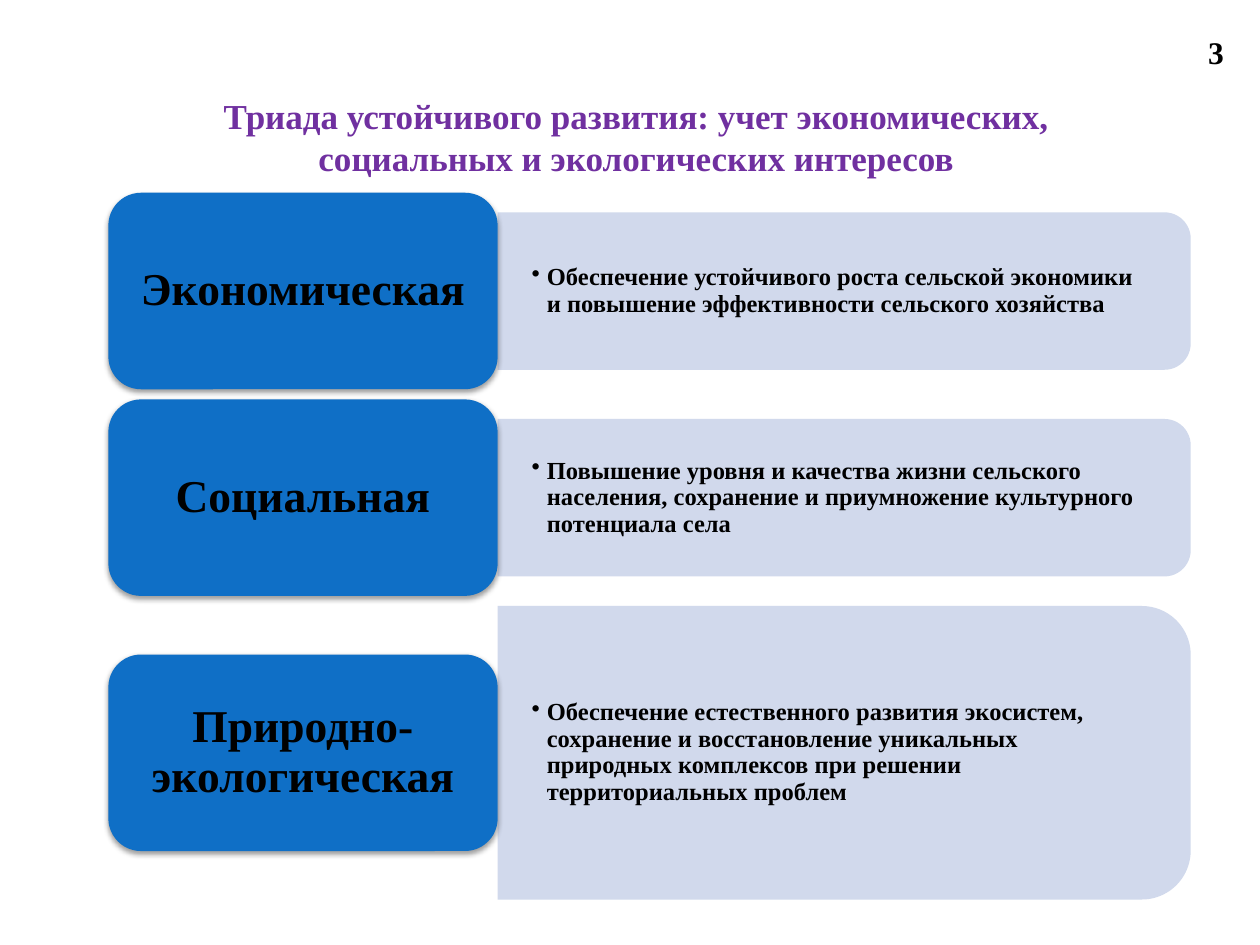
from lxml.etree import SubElement
from pptx import Presentation
from pptx.dml.color import RGBColor
from pptx.enum.shapes import MSO_SHAPE as Shape
from pptx.enum.text import MSO_ANCHOR as Anchor, MSO_AUTO_SIZE as AutoSize, PP_ALIGN as Align
from pptx.oxml.ns import qn
from pptx.util import Inches, Pt

COLUMNS, ROWS = 100, 75
LABEL_LEFT, LABEL_WIDTH, LABEL_HEIGHT = 8.6, 30.9, 15.6
LABEL_INSET = 0.76
BAR_LEFT, BAR_LENGTH = LABEL_LEFT + LABEL_WIDTH, 55
FIRST_TOP, GAP = 15.3, 0.8

TRIAD = [
    ("Экономическая", 12.5,
     "Обеспечение устойчивого роста сельской экономики и повышение эффективности сельского хозяйства"),
    ("Социальная", 12.5,
     "Повышение уровня и качества жизни сельского населения, сохранение и приумножение "
     "культурного потенциала села"),
    ("Природно-экологическая", 23.3,
     "Обеспечение естественного развития экосистем, сохранение и восстановление уникальных "
     "природных комплексов при решении территориальных проблем"),
]


def color(value):
    return RGBColor.from_string(value)


class TriadSlide:
    font = "Times New Roman"
    ink, accent, label_fill, bar_fill = "000000", "7030A0", "0F6FC6", "CCD5EA"

    def __init__(self, deck):
        self.slide = deck.slides.add_slide(deck.slide_layouts[6])
        self.column = deck.slide_width / COLUMNS
        self.row = deck.slide_height / ROWS

    def place(self, left, top, width, height):
        return (round(left * self.column), round(top * self.row),
                round(width * self.column), round(height * self.row))

    def panel(self, kind, area, fill):
        panel = self.slide.shapes.add_shape(kind, *self.place(*area))
        panel.shadow.inherit = False
        panel.fill.solid()
        panel.fill.fore_color.rgb = color(fill)
        panel.line.fill.background()
        return panel

    def bar(self, middle, thickness):
        left = BAR_LEFT + (BAR_LENGTH - thickness) / 2
        area = left, middle - BAR_LENGTH / 2, thickness, BAR_LENGTH
        bar = self.panel(Shape.ROUND_2_SAME_RECTANGLE, area, self.bar_fill)
        bar.rotation = 90
        tint = bar.fill._xPr.find(".//" + qn("a:srgbClr"))
        SubElement(tint, qn("a:alpha"), val="90000")

    def label(self, middle):
        area = LABEL_LEFT, middle - LABEL_HEIGHT / 2, LABEL_WIDTH, LABEL_HEIGHT
        label = self.panel(Shape.ROUNDED_RECTANGLE, area, self.label_fill)
        effects = label._element.spPr.find(qn("a:effectLst"))
        shadow = SubElement(effects, qn("a:outerShdw"), blurRad=str(Pt(3.1)),
                            dist=str(Pt(1.6)), dir="5400000", rotWithShape="0")
        shade = SubElement(shadow, qn("a:srgbClr"), val=self.ink)
        SubElement(shade, qn("a:alpha"), val="38000")

    def text(self, words, area, size, ink=ink, align=Align.LEFT, anchor=Anchor.TOP,
             margins=(0.1, 0.05), spacing=None, bullet=False, wrap=True, grow=False):
        frame = self.slide.shapes.add_textbox(*self.place(*area)).text_frame
        frame.word_wrap = wrap
        frame.auto_size = AutoSize.SHAPE_TO_FIT_TEXT if grow else AutoSize.NONE
        frame.vertical_anchor = anchor
        frame.margin_left = frame.margin_right = Inches(margins[0])
        frame.margin_top = frame.margin_bottom = Inches(margins[1])
        frame.text = words
        paragraph = frame.paragraphs[0]
        paragraph.alignment = align
        paragraph.line_spacing = spacing
        if bullet:
            paragraph.level = 1
            properties = paragraph._p.get_or_add_pPr()
            properties.set("marL", str(Inches(0.12)))
            properties.set("indent", str(Inches(-0.12)))
            SubElement(properties, qn("a:buChar"), char="•")
        font = paragraph.runs[0].font
        font.name, font.size, font.bold = self.font, Pt(size), True
        font.color.rgb = color(ink)

    def interest(self, name, goal, middle, thickness):
        self.bar(middle, thickness)
        inset = thickness * 0.05
        self.text(goal, (BAR_LEFT, middle - thickness / 2 + inset,
                         BAR_LENGTH - inset, thickness - 2 * inset),
                  14, anchor=Anchor.MIDDLE, margins=(0.27, 0.14), spacing=0.9, bullet=True)
        self.label(middle)
        self.text(name, (LABEL_LEFT + LABEL_INSET, middle - LABEL_HEIGHT / 2 + LABEL_INSET,
                         LABEL_WIDTH - 2 * LABEL_INSET, LABEL_HEIGHT - 2 * LABEL_INSET),
                  26, align=Align.CENTER, anchor=Anchor.MIDDLE, margins=(0.11, 0.05), spacing=0.9)


def main():
    deck = Presentation()
    deck.slide_width, deck.slide_height = Inches(10), Inches(7.5)
    page = TriadSlide(deck)
    top = FIRST_TOP
    for name, thickness, goal in TRIAD:
        height = max(LABEL_HEIGHT, thickness)
        page.interest(name, goal, top + height / 2, thickness)
        top += height + GAP
    page.text("3", (94.9, 2.1, 3.3, 4), 18, wrap=False, grow=True)
    page.text("Триада устойчивого развития: учет экономических, социальных и экологических интересов",
              (14.1, 7, 72.8, 7.7), 20, page.accent, Align.CENTER, grow=True)
    deck.save("out.pptx")


if __name__ == "__main__":
    main()
